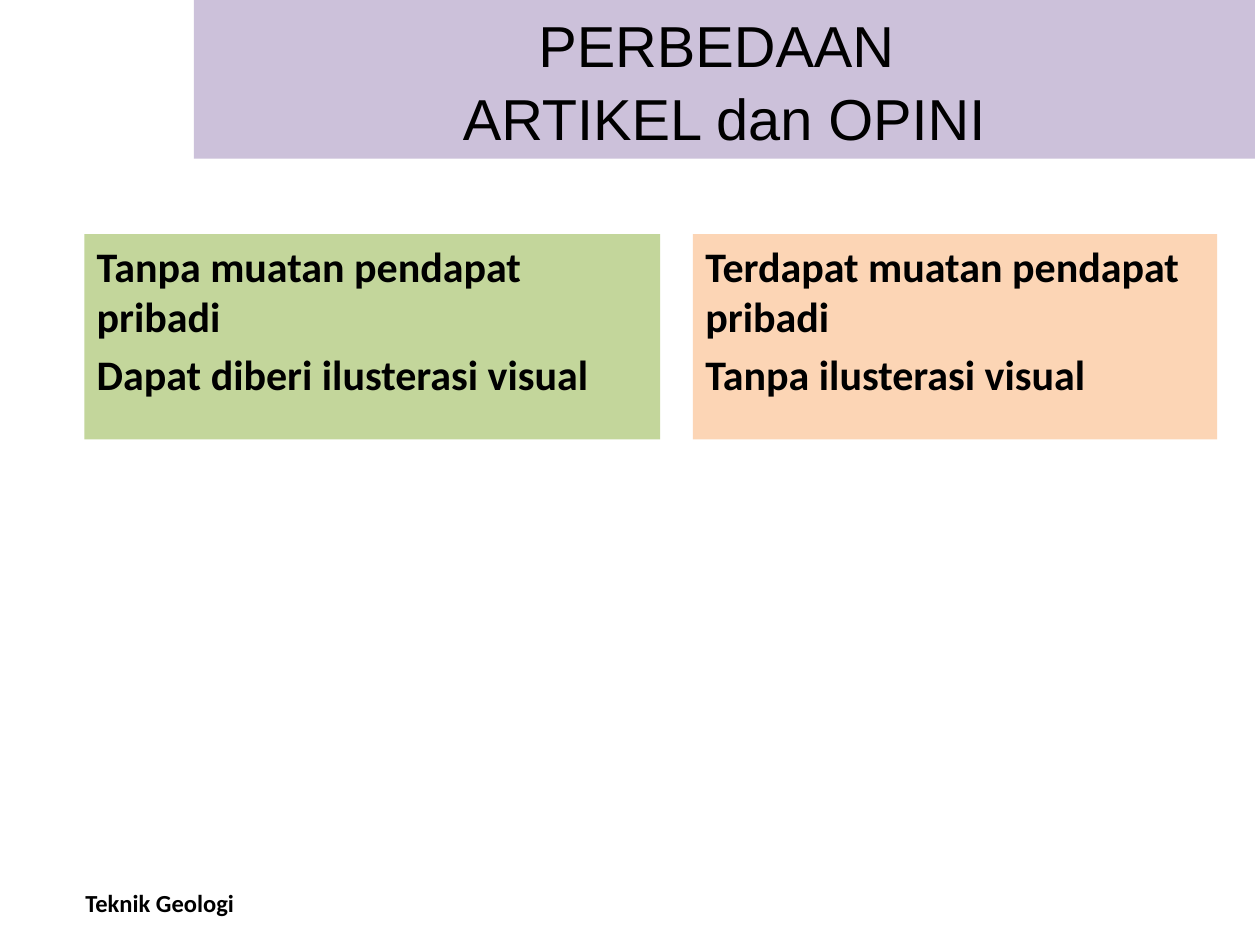
from pptx import Presentation
from pptx.dml.color import RGBColor
from pptx.enum.shapes import MSO_SHAPE as Shape
from pptx.enum.text import MSO_ANCHOR as Anchor, PP_ALIGN as Align
from pptx.util import Cm, Pt


def colour(value):
    return RGBColor.from_string(value)


class SlideBuilder:
    ink = "000000"
    heading_font = "Arial"
    body_font = "Calibri"

    def __init__(self, page):
        self.page = page

    def set_text(self, box, text, font, size, bold, align, anchor):
        frame = box.text_frame
        frame.word_wrap = True
        frame.vertical_anchor = anchor
        frame.text = text
        for index, para in enumerate(frame.paragraphs):
            para.alignment = align
            if index:
                para.space_before = Pt(4)
            for span in para.runs:
                span.font.name = font
                span.font.size = Pt(size)
                span.font.bold = bold
                span.font.color.rgb = colour(self.ink)

    def panel(self, left, top, width, height, fill):
        box = self.page.shapes.add_shape(
            Shape.RECTANGLE, Cm(left), Cm(top), Cm(width), Cm(height))
        box.shadow.inherit = False
        box.fill.solid()
        box.fill.fore_color.rgb = colour(fill)
        box.line.fill.background()
        return box

    def title(self, text):
        box = self.panel(3.91, 0, 21.39, 3.2, "CCC1DA")
        self.set_text(box, text, self.heading_font, 33, False, Align.CENTER, Anchor.MIDDLE)
        box.text_frame.paragraphs[0].line_spacing = 1.05

    def column(self, left, width, fill, points):
        box = self.panel(left, 4.72, width, 4.14, fill)
        self.set_text(box, "\n".join(points), self.body_font, 24, True, Align.LEFT, Anchor.TOP)

    def footer(self, text):
        box = self.page.shapes.add_textbox(Cm(1.47), Cm(17.78), Cm(3.89), Cm(0.84))
        self.set_text(box, text, self.body_font, 14, True, Align.LEFT, Anchor.TOP)


def main():
    deck = Presentation()
    deck.slide_width, deck.slide_height = Cm(25.4), Cm(19.05)
    builder = SlideBuilder(deck.slides.add_slide(deck.slide_layouts[6]))
    builder.footer("Teknik Geologi")
    builder.title("PERBEDAAN \vARTIKEL dan OPINI")
    builder.column(1.7, 11.61, "C3D69B",
                   ["Tanpa muatan pendapat pribadi", "Dapat diberi ilusterasi visual"])
    builder.column(13.97, 10.57, "FCD5B5",
                   ["Terdapat muatan pendapat pribadi", "Tanpa ilusterasi visual"])
    deck.save("out.pptx")


if __name__ == "__main__":
    main()
